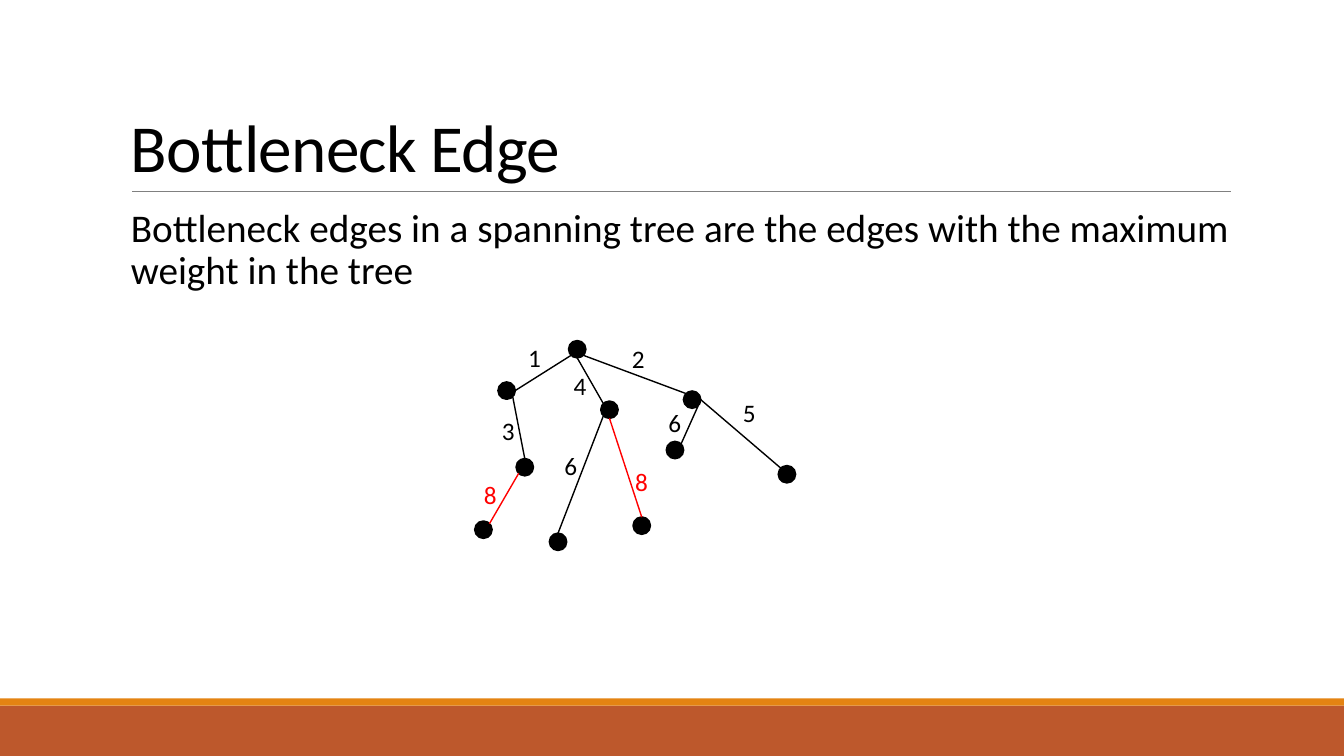
"""Build a slide that explains bottleneck edges in a spanning tree."""
from math import cos, radians, sin

from pptx import Presentation
from pptx import util as u
from pptx.dml.color import RGBColor
from pptx.enum import shapes, text
from pptx.oxml.ns import qn

BLACK, RED = "000000", "FF0000"
DOT = 0.17

NODES = {
    "root": (5.64, 3.38),
    "a": (4.94, 3.79),
    "b": (5.96, 3.98),
    "c": (6.78, 3.88),
    "d": (5.12, 4.55),
    "e": (6.61, 4.38),
    "f": (4.71, 5.17),
    "g": (5.45, 5.29),
    "h": (6.28, 5.13),
    "i": (7.72, 4.62),
}

EDGES = [
    ("root", 3, "a", 6, 1, (5.14, 3.35)),
    ("root", 5, "c", 1, 2, (6.17, 3.36)),
    ("a", 5, "d", 0, 3, (4.88, 4.07)),
    ("root", 4, "b", 1, 4, (5.59, 3.62)),
    ("c", 6, "i", 1, 5, (7.27, 3.89)),
    ("b", 3, "g", 0, 6, (5.5, 4.42)),
    ("c", 5, "e", 7, 6, (6.53, 3.99)),
    ("b", 4, "h", 0, 8, (6.2, 4.58)),
    ("d", 3, "f", 7, 8, (4.7, 4.71)),
]


def shade(code):
    return RGBColor.from_string(code)


def rim(name, site):
    x, y = NODES[name]
    turn = radians(45 * site)
    r = DOT / 2
    return x + r - r * sin(turn), y + r - r * cos(turn)


class Deck:
    font = "Calibri"

    def __init__(self, wide, high):
        self.prs = Presentation()
        self.prs.slide_width = u.Inches(wide)
        self.prs.slide_height = u.Inches(high)
        self.slide = self.prs.slides.add_slide(self.prs.slide_layouts[6])

    def shape(self, kind, box, fill, line=None):
        item = self.slide.shapes.add_shape(kind, *map(u.Inches, box))
        item.shadow.inherit = False
        item.fill.solid()
        item.fill.fore_color.rgb = shade(fill)
        if line:
            item.line.color.rgb = shade(fill)
            item.line.width = u.Pt(line)
        else:
            item.line.fill.background()

    def line(self, start, end, color=BLACK, width=1):
        item = self.slide.shapes.add_connector(
            shapes.MSO_CONNECTOR.STRAIGHT, *map(u.Inches, (*start, *end)))
        item.line.color.rgb = shade(color)
        item.line.width = u.Pt(width)
        props = item._element.spPr
        props.append(props.makeelement(qn("a:effectLst"), {}))

    def text(self, words, box, size, color=BLACK, wrap=True):
        item = self.slide.shapes.add_textbox(*map(u.Inches, box))
        frame = item.text_frame
        frame.word_wrap = wrap
        frame.text = words
        font = frame.paragraphs[0].runs[0].font
        font.name = self.font
        font.size = u.Pt(size)
        font.color.rgb = shade(color)
        return frame

    def title(self, words, box):
        frame = self.text(words, box, 48)
        frame.vertical_anchor = text.MSO_ANCHOR.BOTTOM
        para = frame.paragraphs[0]
        para.line_spacing = 0.85
        para.runs[0]._r.get_or_add_rPr().set("spc", "-50")

    def body(self, words, box):
        frame = self.text(words, box, 28)
        frame.margin_left = u.Inches(0.1)
        frame.margin_right = 0
        para = frame.paragraphs[0]
        para.line_spacing = 0.9
        para.space_before = u.Pt(12)
        para.space_after = u.Pt(2)

    def label(self, words, spot, color):
        frame = self.text(words, (*spot, 0.33, 0.4), 18, color, wrap=False)
        frame.auto_size = text.MSO_AUTO_SIZE.SHAPE_TO_FIT_TEXT

    def tree(self):
        for spot in NODES.values():
            self.shape(shapes.MSO_SHAPE.OVAL, (*spot, DOT, DOT), BLACK, 1.25)
        top = max(edge[4] for edge in EDGES)
        for start, out, end, into, weight, spot in EDGES:
            color = RED if weight == top else BLACK
            self.line(rim(start, out), rim(end, into), color)
            self.label(str(weight), spot, color)


def main():
    deck = Deck(13.33, 7.5)
    rect = shapes.MSO_SHAPE.RECTANGLE
    deck.shape(rect, (0, 7, 13.33, 0.5), "BD582C")
    deck.shape(rect, (0, 6.93, 13.33, 0.07), "E48312")
    deck.line((1.31, 1.9), (12.21, 1.9), "808080", 0.5)
    deck.title("Bottleneck Edge", (1.2, 0.31, 11, 1.59))
    deck.body("Bottleneck edges in a spanning tree are the edges "
              "with the maximum weight in the tree", (1.2, 2.02, 11, 4.4))
    deck.tree()
    deck.prs.save("out.pptx")


if __name__ == "__main__":
    main()
